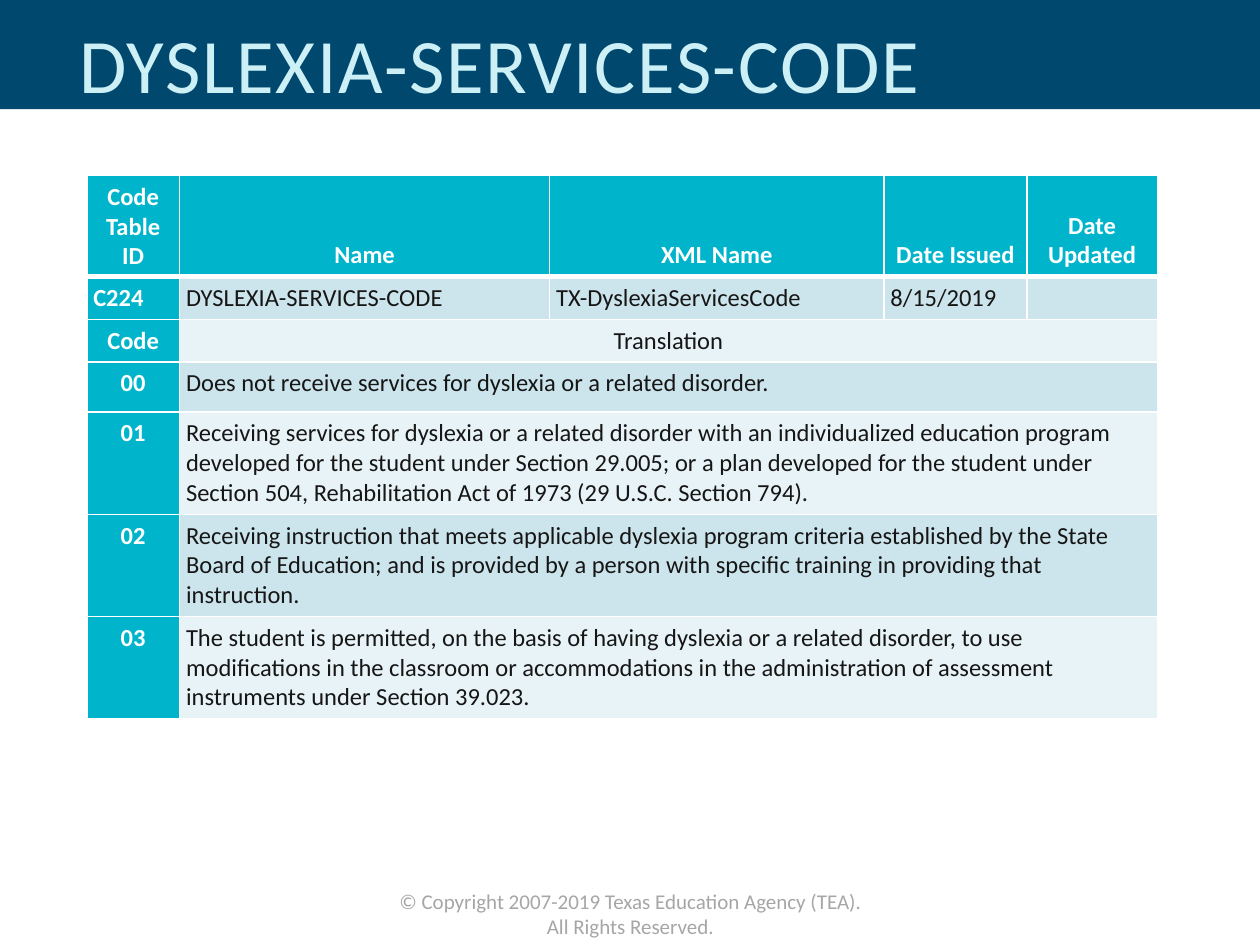
"""Build the slide that lists the dyslexia services codes."""
from lxml.etree import SubElement
from pptx import Presentation
from pptx.dml.color import RGBColor
from pptx.enum.shapes import MSO_SHAPE
from pptx.enum.text import MSO_ANCHOR, PP_ALIGN
from pptx.oxml.ns import qn
from pptx.util import Cm, Pt

TITLE = "DYSLEXIA-SERVICES-CODE"
NOTE = "© Copyright 2007-2019 Texas Education Agency (TEA). All Rights Reserved."
HEADS = ["Code Table ID", "Name", "XML Name", "Date Issued", "Date Updated"]
ENTRY = ["C224", "DYSLEXIA-SERVICES-CODE", "TX-DyslexiaServicesCode", "8/15/2019", ""]
CODES = [
    ("Code", "Translation"),
    ("00", "Does not receive services for dyslexia or a related disorder."),
    ("01", "Receiving services for dyslexia or a related disorder with an "
           "individualized education program developed for the student under "
           "Section 29.005; or a plan developed for the student under Section 504, "
           "Rehabilitation Act of 1973 (29 U.S.C. Section 794)."),
    ("02", "Receiving instruction that meets applicable dyslexia program criteria "
           "established by the State Board of Education; and is provided by a person "
           "with specific training in providing that instruction."),
    ("03", "The student is permitted, on the basis of having dyslexia or a related "
           "disorder, to use modifications in the classroom or accommodations in the "
           "administration of assessment instruments under Section 39.023."),
]
WIDTHS = [1.87, 7.46, 6.74, 2.88, 2.63]
HEIGHTS = [2.03, 0.86, 0.86, 1.01, 2.06, 2.06, 2.06]
THEME = {
    "font": "Calibri", "band": "00486E", "title": "CCF0F5", "note": "A6A6A6",
    "head": "00B5CB", "rows": ("CCE5EC", "E7F3F6"), "ink": "171616", "white": "FFFFFF",
    "title_pt": 44, "body_pt": 14, "note_pt": 12, "line_pt": 1, "rule_pt": 3,
}


def style(para, size, hue, bold=False):
    """Format the runs of a paragraph."""
    for run in para.runs:
        font = run.font
        font.name, font.size, font.bold = THEME["font"], Pt(size), bold
        font.color.rgb = RGBColor.from_string(hue)


def label(slide, place, text, size, hue):
    """Add a wrapped text box and return its paragraph."""
    frame = slide.shapes.add_textbox(*map(Cm, place)).text_frame
    frame.word_wrap = True
    frame.text = text
    para = frame.paragraphs[0]
    style(para, size, hue)
    return para


def border(cell, row):
    """Draw the white edges of a cell, thick below the heads."""
    thick = {0: "lnB", 1: "lnT"}.get(row)
    props = cell._tc.get_or_add_tcPr()
    for side in ("lnL", "lnR", "lnT", "lnB"):
        size = THEME["rule_pt" if side == thick else "line_pt"]
        line = SubElement(props, qn(f"a:{side}"), w=str(Pt(size)))
        fill = SubElement(line, qn("a:solidFill"))
        SubElement(fill, qn("a:srgbClr"), val=THEME["white"])


def paint(cell, row, col, text):
    """Fill one table cell and set its text."""
    head = row == 0 or col == 0
    border(cell, row)
    cell.fill.solid()
    hue = THEME["head"] if head else THEME["rows"][(row - 1) % 2]
    cell.fill.fore_color.rgb = RGBColor.from_string(hue)
    cell.margin_left = cell.margin_right = Cm(0.13)
    cell.margin_top = cell.margin_bottom = Cm(0.13)
    cell.vertical_anchor = MSO_ANCHOR.BOTTOM if row in (0, 2) else MSO_ANCHOR.TOP
    cell.text_frame.text = text
    para = cell.text_frame.paragraphs[0]
    mid = row in (0, 2) or (col == 0 and row != 1)
    para.alignment = PP_ALIGN.CENTER if mid else PP_ALIGN.LEFT
    style(para, THEME["body_pt"], THEME["white" if head else "ink"], head)
    if not text:
        SubElement(para._p, qn("a:endParaRPr"), sz=str(THEME["body_pt"] * 100))


def grid(slide):
    """Add the code table."""
    rows = [HEADS, ENTRY, *CODES]
    size = Cm(sum(WIDTHS)), Cm(sum(HEIGHTS))
    table = slide.shapes.add_table(
        len(rows), len(WIDTHS), Cm(1.75), Cm(3.54), *size).table
    table.first_row = table.horz_banding = False
    for part, wide in zip(table.columns, WIDTHS):
        part.width = Cm(wide)
    for part, high in zip(table.rows, HEIGHTS):
        part.height = Cm(high)
    for row, texts in enumerate(rows):
        if len(texts) < len(WIDTHS):
            table.cell(row, 1).merge(table.cell(row, len(WIDTHS) - 1))
        for col in range(len(WIDTHS)):
            text = texts[col] if col < len(texts) else ""
            paint(table.cell(row, col), row, col, text)


def main():
    """Build and save the deck."""
    deck = Presentation()
    deck.slide_width, deck.slide_height = Cm(25.4), Cm(19.05)
    slide = deck.slides.add_slide(deck.slide_layouts[6])

    band = slide.shapes.add_shape(MSO_SHAPE.RECTANGLE, 0, 0, deck.slide_width, Cm(2.2))
    band.shadow.inherit = False
    band.fill.solid()
    band.fill.fore_color.rgb = RGBColor.from_string(THEME["band"])
    band.line.fill.background()

    note = label(slide, (7.72, 17.78, 9.98, 0.76), NOTE, THEME["note_pt"], THEME["note"])
    note.alignment = PP_ALIGN.CENTER

    place = (1.35, 0.28, 20.32, 2.2)
    title = label(slide, place, TITLE, THEME["title_pt"], THEME["title"])
    title.line_spacing = 0.9
    title.runs[0]._r.get_or_add_rPr().set("spc", "100")
    slide.shapes[-1].text_frame.vertical_anchor = MSO_ANCHOR.MIDDLE

    grid(slide)
    deck.save("out.pptx")


if __name__ == "__main__":
    main()
